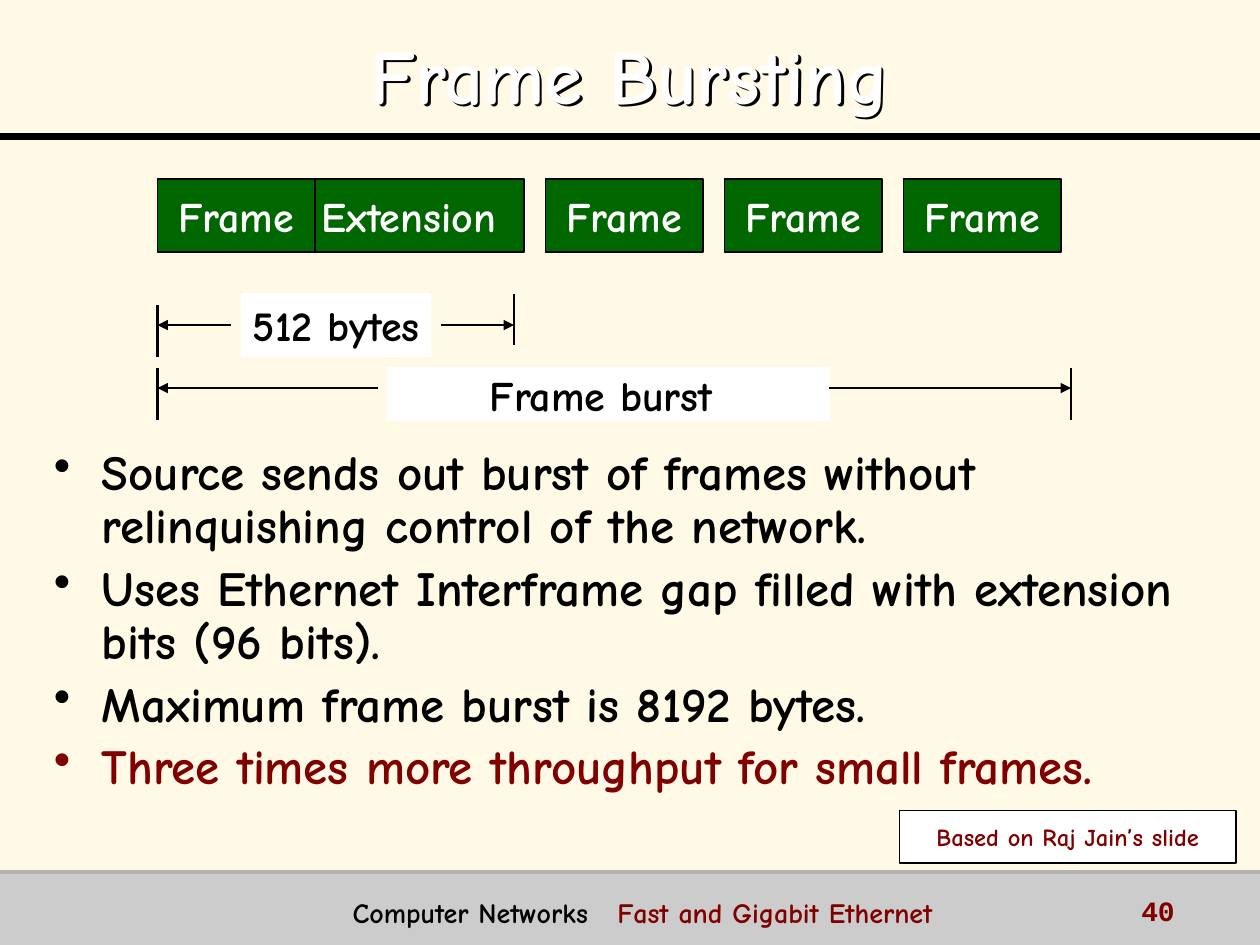
import pptx
import pptx.util
import pptx.dml.color
import pptx.enum.shapes
import pptx.enum.text
import pptx.oxml
import pptx.oxml.ns
from pptx.util import Inches

BLACK, WHITE, MAROON, GREEN = "000000", "FFFFFF", "800000", "006600"
CENTER = pptx.enum.text.PP_ALIGN.CENTER
MIDDLE = pptx.enum.text.MSO_ANCHOR.MIDDLE
NS = pptx.oxml.ns.nsdecls("a")


def color(hex_code):
    return pptx.dml.color.RGBColor.from_string(hex_code)


def xml(text):
    return pptx.oxml.parse_xml(text)


def add_run(paragraph, words, size, ink, font="Comic Neue"):
    run = paragraph.add_run()
    run.text = words
    run.font.size = pptx.util.Pt(size)
    run.font.name = font
    run.font.bold = True
    run.font.color.rgb = color(ink)
    return run


def add_text(slide, left, top, width, height):
    box = slide.shapes.add_textbox(
        Inches(left), Inches(top), Inches(width), Inches(height))
    box.text_frame.word_wrap = True
    return box


def add_block(slide, left, top, width, height, fill, outline=None,
              label="", size=24, ink=BLACK):
    block = slide.shapes.add_shape(
        pptx.enum.shapes.MSO_SHAPE.RECTANGLE,
        Inches(left), Inches(top), Inches(width), Inches(height))
    block.shadow.inherit = False
    block.fill.solid()
    block.fill.fore_color.rgb = color(fill)
    if outline:
        block.line.color.rgb = color(outline)
        block.line.width = pptx.util.Pt(0.75)
    else:
        block.line.fill.background()
    if label:
        frame = block.text_frame
        frame.word_wrap = False
        frame.vertical_anchor = MIDDLE
        frame.paragraphs[0].alignment = CENTER
        add_run(frame.paragraphs[0], label, size, ink)


def add_line(slide, x1, y1, x2, y2, weight, ink=BLACK, arrow=False):
    line = slide.shapes.add_connector(
        pptx.enum.shapes.MSO_CONNECTOR.STRAIGHT,
        Inches(x1), Inches(y1), Inches(x2), Inches(y2))
    line.line.color.rgb = color(ink)
    line.line.width = pptx.util.Pt(weight)
    if arrow:
        line.line._get_or_add_ln().append(xml(f'<a:tailEnd {NS} type="triangle"/>'))
    line._element.spPr.append(xml(f"<a:effectLst {NS}/>"))


def add_title(slide, left, top, width, height):
    box = add_text(slide, left, top, width, height)
    box.text_frame.vertical_anchor = MIDDLE
    heading = box.text_frame.paragraphs[0]
    heading.alignment = CENTER
    heading.line_spacing = 1.1
    add_run(heading, "Frame Bursting", 44, WHITE)
    # Hard black shadow behind the letters
    box._element.spPr.append(xml(
        f'<a:effectLst {NS}><a:outerShdw dist="25400" dir="2700000" algn="ctr" '
        'rotWithShape="0"><a:srgbClr val="000000"/></a:outerShdw></a:effectLst>'))


def add_frame_row(slide, left, top, height):
    frame_width, pitch = 1.25, 1.42
    add_block(slide, left + 1.08, top, 1.83, height, GREEN, BLACK,
              "Extension", ink=WHITE)
    first_burst = left + 3.08
    for x in [left] + [first_burst + i * pitch for i in range(3)]:
        add_block(slide, x, top, frame_width, height, GREEN, BLACK,
                  "Frame", ink=WHITE)


def add_span(slide, left, right, arrow_y, tick_tops, label, label_box, arrow_starts):
    """Dimension line: end ticks, a label and two outward arrows."""
    for x, tick_top in zip((left, right), tick_tops):
        add_line(slide, x, tick_top, x, tick_top + 0.41, 1.5)
    add_block(slide, *label_box, WHITE, WHITE, label)
    for start, end in zip(arrow_starts, (left, right)):
        add_line(slide, start, arrow_y, end, arrow_y, 0.75, arrow=True)


def add_bullets(slide, left, top, width, height):
    points = [
        ("Source sends out burst of frames without relinquishing control of the network.", BLACK),
        ("Uses Ethernet Interframe gap filled with extension bits (96 bits).", BLACK),
        ("Maximum frame burst is 8192 bytes.", BLACK),
        ("Three times more throughput for small frames.", MAROON),
    ]
    frame = add_text(slide, left, top, width, height).text_frame
    for i, (words, ink) in enumerate(points):
        point = frame.add_paragraph() if i else frame.paragraphs[0]
        properties = point._p.get_or_add_pPr()
        properties.set("marL", str(Inches(0.38)))
        properties.set("indent", str(Inches(-0.38)))
        properties.append(xml(f"<a:buFontTx {NS}/>"))
        properties.append(xml(f'<a:buChar {NS} char="•"/>'))
        point.line_spacing = 0.9
        if i:
            point.space_before = pptx.util.Pt(5.6)
        add_run(point, words, 28, ink)


def add_footer(slide, left, top, width, height):
    add_block(slide, left, top, width, height, "CCCCCC")
    add_line(slide, left, top, left + width, top, 2, "B2B2B2")
    # Course and lecture names
    names = add_text(slide, left + 1.46, top + 0.14, 7.28, 0.31).text_frame.paragraphs[0]
    names.alignment = CENTER
    add_run(names, "Computer Networks", 16, BLACK)
    gap = add_run(names, " ", 16, BLACK)
    gap.font._element.set("spc", "1100")
    add_run(names, "Fast and Gigabit Ethernet", 16, MAROON)
    # Page number
    page = add_text(slide, left + 8.96, top + 0.12, 1, 0.25).text_frame.paragraphs[0]
    add_run(page, "40", 16, MAROON, "Courier New")


def main():
    deck = pptx.Presentation()
    deck.slide_width, deck.slide_height = Inches(10), Inches(7.5)
    slide = deck.slides.add_slide(deck.slide_layouts[6])
    slide.background.fill.solid()
    slide.background.fill.fore_color.rgb = color("FFF9E6")

    add_footer(slide, 0, 6.92, 10, 0.58)
    add_line(slide, 0, 1.08, 10, 1.08, 4)
    add_title(slide, 0.75, 0.13, 8.5, 0.83)

    # Burst diagram
    add_frame_row(slide, 1.25, 1.42, 0.58)
    add_span(slide, 1.25, 4.08, 2.58, (2.42, 2.33), "512 bytes",
             (1.92, 2.33, 1.5, 0.5), (1.83, 3.5))
    add_span(slide, 1.25, 8.5, 3.08, (2.92, 2.92), "Frame burst ",
             (3.08, 2.92, 3.5, 0.42), (3, 6.58))

    add_bullets(slide, 0.33, 3.51, 9.25, 3.08)
    # Credit
    add_block(slide, 7.14, 6.43, 2.67, 0.42, WHITE, BLACK,
              "Based on Raj Jain’s slide", 14, MAROON)
    deck.save("out.pptx")


if __name__ == "__main__":
    main()
